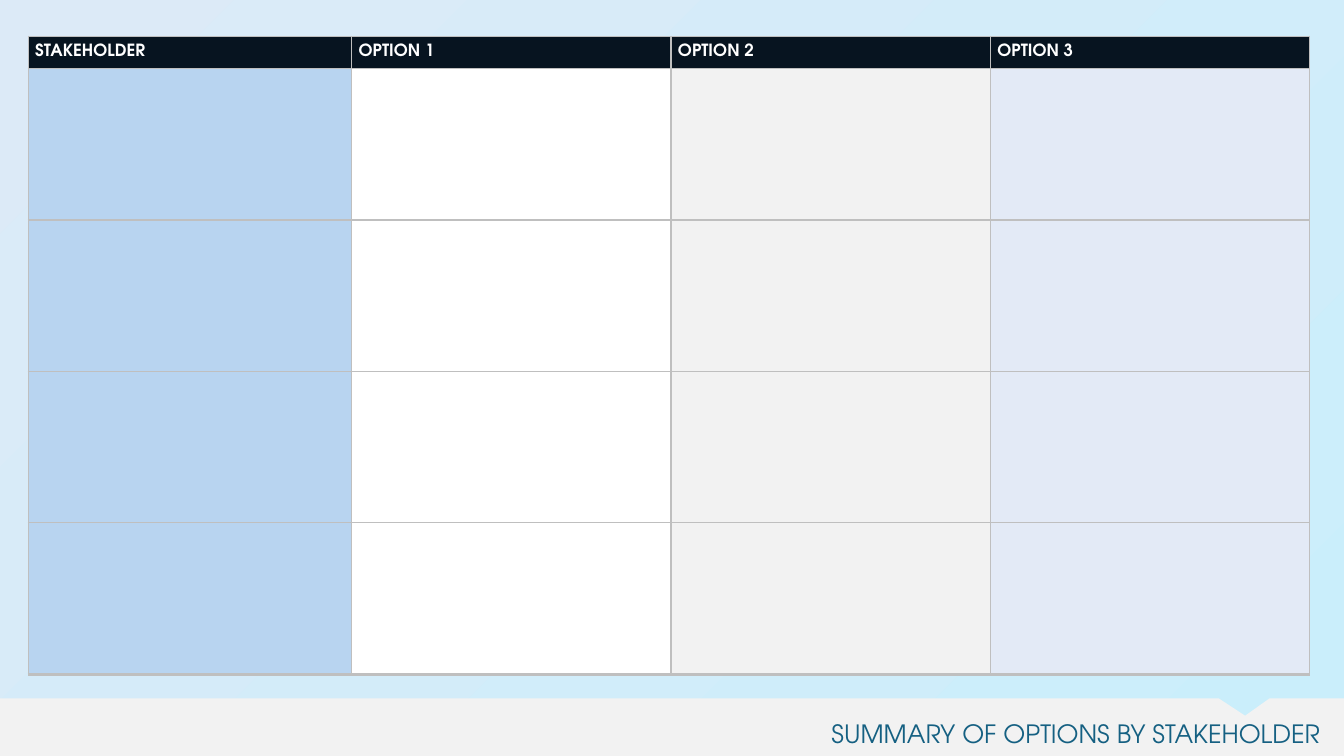
import pptx
import pptx.util
import pptx.dml.color
import pptx.enum.text
import pptx.oxml
import pptx.oxml.ns

WIDTH, HEIGHT = 13.33, 7.5
FONT = "TeX Gyre Adventor"
HEADINGS = ["STAKEHOLDER", "OPTION 1", "OPTION 2", "OPTION 3"]
COLUMN_FILLS = ["B8D4F0", "FFFFFF", "F2F2F2", "E3EAF6"]
COLUMN_WIDTHS = [3.21, 3.17, 3.17, 3.17]
HEADER_HEIGHT = 0.32
BODY_ROWS = 4
HEADER_FILL = "071420"
GRID_COLOUR = "BFBFBF"

inches = pptx.util.Inches
ALIGN = pptx.enum.text.PP_ALIGN
ANCHOR = pptx.enum.text.MSO_ANCHOR


def colour(value):
    return pptx.dml.color.RGBColor.from_string(value)


def paint(fill, value):
    fill.solid()
    fill.fore_color.rgb = colour(value)


def write(frame, text, size, ink, bold=False, align=ALIGN.LEFT):
    para = frame.paragraphs[0]
    para.alignment = align
    span = para.add_run()
    span.text = text
    span.font.name = FONT
    span.font.size = pptx.util.Pt(size)
    span.font.bold = bold
    span.font.color.rgb = colour(ink)


def add_borders(cell, bottom):
    """Rule all four sides of a cell; call before the cell is filled."""
    properties = cell._tc.get_or_add_tcPr()
    for side, weight in (("L", 1), ("R", 1), ("T", 1), ("B", bottom)):
        properties.append(pptx.oxml.parse_xml(
            f'<a:ln{side} {pptx.oxml.ns.nsdecls("a")} w="{pptx.util.Pt(weight)}">'
            f'<a:solidFill><a:srgbClr val="{GRID_COLOUR}"/></a:solidFill>'
            f'</a:ln{side}>'))


def add_background(page):
    fill = page.background.fill
    fill.gradient()
    fill.gradient_angle = 135
    for stop, value in zip(fill.gradient_stops, ("CAEEFB", "DCEAF7")):
        stop.color.rgb = colour(value)


def add_title_band(page, left, top, width, height):
    # Band with a notch cut into its top edge
    right, bottom = left + width, top + height
    notch = [(right - 1.24, top), (right - 0.98, top + 0.3 * height),
             (right - 0.74, top)]
    outline = notch + [(right, top), (right, bottom), (left, bottom)]
    builder = page.shapes.build_freeform(inches(left), inches(top))
    builder.add_line_segments([(inches(x), inches(y)) for x, y in outline])
    band = builder.convert_to_shape()
    band.shadow.inherit = False
    paint(band.fill, "F2F2F2")
    band.line.fill.background()

    # Title, set to the right
    box = page.shapes.add_textbox(inches(left + 1.28), inches(top + 0.15),
                                  inches(width - 1.42), inches(0.4))
    box.text_frame.word_wrap = True
    box.text_frame.auto_size = pptx.enum.text.MSO_AUTO_SIZE.SHAPE_TO_FIT_TEXT
    write(box.text_frame, "SUMMARY OF OPTIONS BY STAKEHOLDER", size=18,
          ink="156082", align=ALIGN.RIGHT)


def add_options_table(page, left, top, width, height):
    frame = page.shapes.add_table(BODY_ROWS + 1, len(HEADINGS), inches(left),
                                  inches(top), inches(width), inches(height))
    table = frame.table

    # Column widths and row heights
    for column, share in zip(table.columns, COLUMN_WIDTHS):
        column.width = inches(share * width / sum(COLUMN_WIDTHS))
    for row in table.rows:
        row.height = inches((height - HEADER_HEIGHT) / BODY_ROWS)
    table.rows[0].height = inches(HEADER_HEIGHT)

    # Borders and fills
    for number, row in enumerate(table.rows):
        for cell, body_fill in zip(row.cells, COLUMN_FILLS):
            add_borders(cell, bottom=2.25 if number == BODY_ROWS else 1)
            paint(cell.fill, body_fill if number else HEADER_FILL)

    # Headings
    for cell, heading in zip(table.rows[0].cells, HEADINGS):
        cell.vertical_anchor = ANCHOR.MIDDLE
        cell.margin_left = cell.margin_right = inches(0.07)
        cell.margin_top = cell.margin_bottom = 0
        write(cell.text_frame, heading, size=12, ink="FFFFFF", bold=True)


def main():
    deck = pptx.Presentation()
    deck.slide_width, deck.slide_height = inches(WIDTH), inches(HEIGHT)
    page = deck.slides.add_slide(deck.slide_layouts[6])
    add_background(page)
    add_title_band(page, 0, 6.93, WIDTH, HEIGHT - 6.93)
    add_options_table(page, 0.28, 0.36, 12.71, 6.33)
    deck.save("out.pptx")


if __name__ == "__main__":
    main()
